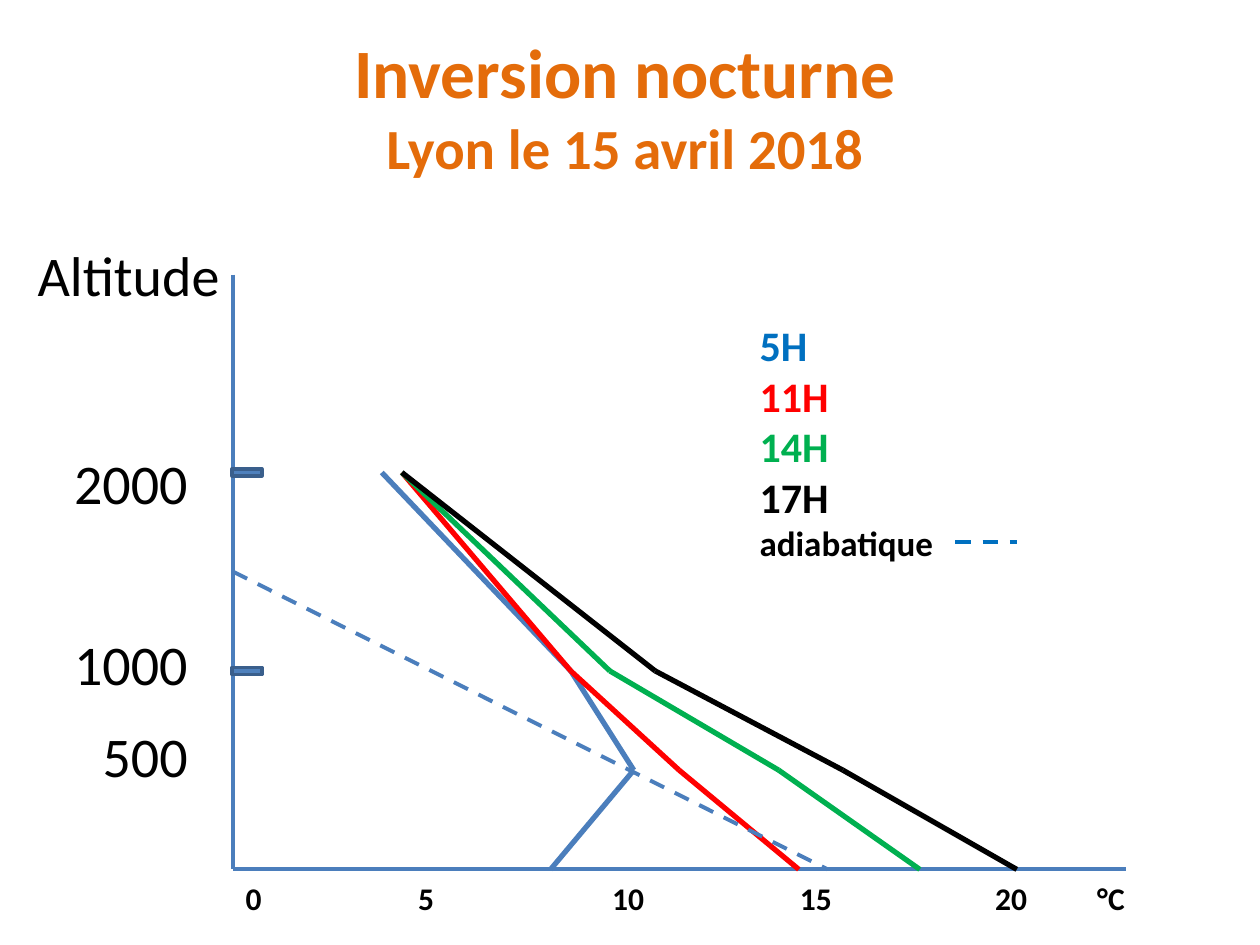
from itertools import pairwise

from lxml import etree
from pptx import Presentation
from pptx import util as u
from pptx.dml.color import RGBColor
from pptx.enum import dml, shapes, text
from pptx.oxml.ns import qn

ORANGE = RGBColor(0xE4, 0x6C, 0x0A)
AXIS = RGBColor(0x4B, 0x7E, 0xBC)
TICK_FILL = RGBColor(0x4F, 0x81, 0xBD)
TICK_LINE = RGBColor(0x3A, 0x5F, 0x8C)
BLUE = RGBColor(0x00, 0x70, 0xC0)
RED = RGBColor(0xFF, 0x00, 0x00)
GREEN = RGBColor(0x00, 0xB0, 0x50)
BLACK = RGBColor(0x00, 0x00, 0x00)

# Plot frame, in inches
LEFT, RIGHT, TOP, BASE = 1.85, 8.94, 2.18, 6.9
INCHES_PER_METRE = 1.575 / 1000


def height_of(altitude):
    return BASE - altitude * INCHES_PER_METRE


class SlideBuilder:
    font = "Calibri"

    def __init__(self, s):
        self.s = s

    def text(self, box, lines, align=text.PP_ALIGN.LEFT, wrap=True,
             anchor=text.MSO_ANCHOR.TOP):
        """Each line is (text, size, colour, bold, space before)."""
        sp = self.s.shapes.add_textbox(*map(u.Inches, box))
        tf = sp.text_frame
        tf.word_wrap = wrap
        tf.vertical_anchor = anchor
        for i, (words, size, color, bold, before) in enumerate(lines):
            p = tf.add_paragraph() if i else tf.paragraphs[0]
            p.text = words
            p.alignment = align
            p.space_before = u.Pt(before)
            p.font.name = self.font
            p.font.size = u.Pt(size)
            p.font.bold = bold
            p.font.color.rgb = color
        return tf

    def tabs(self, p, stops):
        tab_list = etree.Element(qn("a:tabLst"))
        for stop in stops:
            etree.SubElement(tab_list, qn("a:tab"),
                             pos=str(u.Inches(stop)), algn="l")
        p_pr = p._p.get_or_add_pPr()
        default = p_pr.find(qn("a:defRPr"))
        if default is None:
            p_pr.append(tab_list)
        else:
            default.addprevious(tab_list)

    def line(self, start, end, color, width=2.25, dashed=False):
        c = self.s.shapes.add_connector(
            shapes.MSO_CONNECTOR.STRAIGHT, *map(u.Inches, (*start, *end)))
        c.line.color.rgb = color
        c.line.width = u.Pt(width)
        if dashed:
            c.line.dash_style = dml.MSO_LINE.DASH
        etree.SubElement(c._element.spPr, qn("a:effectLst"))

    def profile(self, points, color):
        for start, end in pairwise(points):
            self.line(start, end, color, width=3)

    def tick(self, altitude):
        sp = self.s.shapes.add_shape(
            shapes.MSO_SHAPE.MATH_MINUS, u.Inches(LEFT - 0.05),
            u.Inches(height_of(altitude) - 0.12), u.Inches(0.32), u.Inches(0.24))
        sp.shadow.inherit = False
        sp.fill.solid()
        sp.fill.fore_color.rgb = TICK_FILL
        sp.line.color.rgb = TICK_LINE
        sp.line.width = u.Pt(2)


def main():
    prs = Presentation()
    prs.slide_width, prs.slide_height = u.Inches(10), u.Inches(7.5)
    b = SlideBuilder(prs.slides.add_slide(prs.slide_layouts[6]))

    # Title
    tf = b.text((0.46, 0.21, 9, 1.25),
                [("Inversion nocturne\vLyon le 15 avril 2018", 39.6, ORANGE, True, 0)],
                text.PP_ALIGN.CENTER, anchor=text.MSO_ANCHOR.MIDDLE)
    tf.paragraphs[0].runs[1].font.size = u.Pt(32.4)

    # Altitude labels, kept on one line each by a zero left margin
    tf = b.text((0.5, 3.51, 1.19, 3.31),
                [("2000", 32, BLACK, False, 6), ("1000", 32, BLACK, False, 65),
                 ("500", 32, BLACK, False, 14)], text.PP_ALIGN.RIGHT)
    tf.margin_left = 0
    tf.margin_right = u.Inches(0.2)

    # Axes
    b.line((LEFT, TOP), (LEFT, BASE), AXIS)
    b.line((LEFT, BASE), (RIGHT, BASE), AXIS)

    # Temperature profiles: horizontal position at each altitude
    altitudes = (2000, 1000, 500, 0)
    profiles = [
        (AXIS, (3.03, 4.53, 5.03, 4.37)),
        (RED, (3.19, 4.53, 5.39, 6.34)),
        (GREEN, (3.19, 4.84, 6.18, 7.3)),
        (BLACK, (3.19, 5.2, 6.69, 8.07)),
    ]
    for color, xs in profiles:
        b.profile(list(zip(xs, map(height_of, altitudes))), color)

    # Axis captions
    tf = b.text((LEFT, 6.93, 7.72, 0.4),
                [("0\t5\t10\t15\t20\t°C", 18, BLACK, True, 0)])
    b.tabs(tf.paragraphs[0], (1.37, 2.91, 4.4, 5.95, 6.76))
    b.text((0.2, 1.86, 1.72, 0.64), [("Altitude", 32, BLACK, False, 0)], wrap=False)

    # Legend
    hours = [("5H", BLUE), ("11H", RED), ("14H", GREEN), ("17H", BLACK)]
    b.text((5.93, 2.49, 1.66, 2.05),
           [(hour, 24, color, True, 0) for hour, color in hours]
           + [("adiabatique", 20, BLACK, True, 0)], wrap=False)

    # Adiabatic line and its legend key
    b.line((LEFT, height_of(1500)), (6.57, BASE), AXIS, dashed=True)
    b.line((7.58, 4.3), (8.07, 4.3), BLUE, dashed=True)

    # Altitude ticks
    for altitude in (2000, 1000):
        b.tick(altitude)

    prs.save("out.pptx")


if __name__ == "__main__":
    main()
